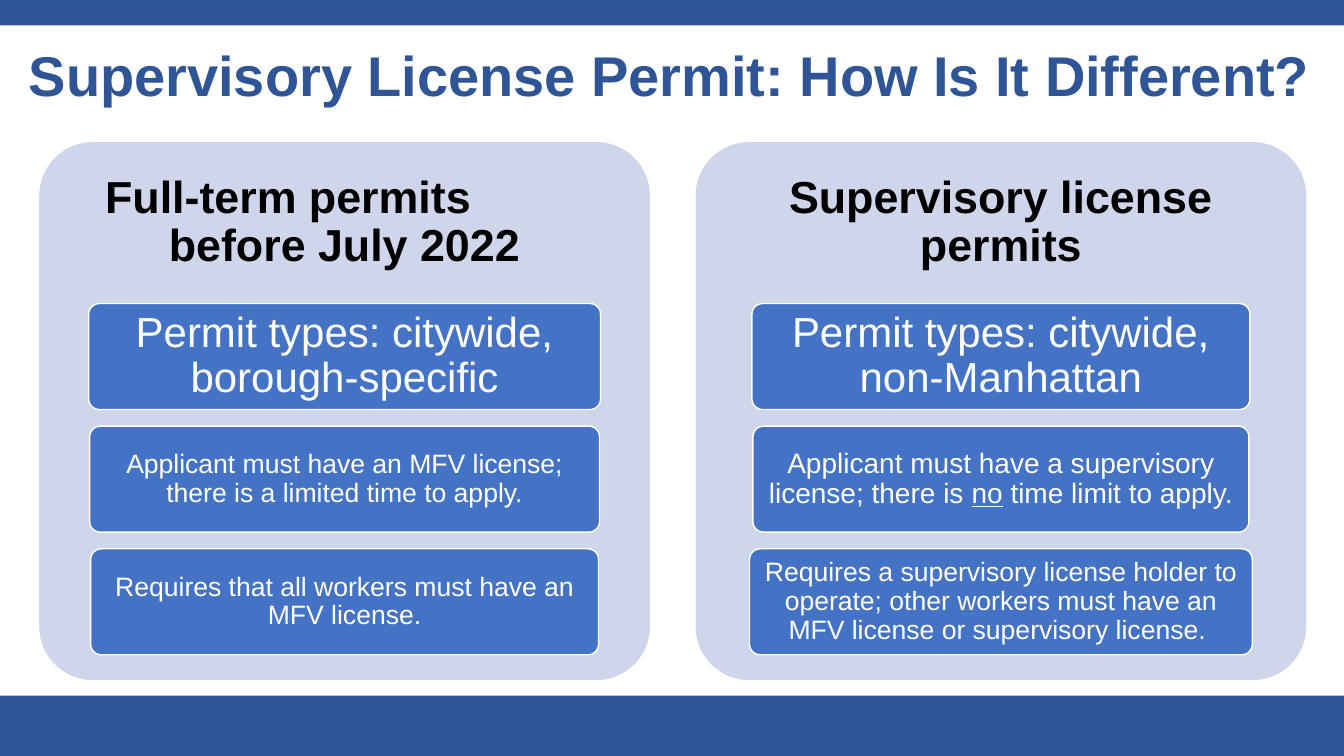
from pptx import Presentation
from pptx.dml.color import RGBColor
from pptx.enum.shapes import MSO_SHAPE
from pptx.enum.text import MSO_ANCHOR, PP_ALIGN
from pptx.util import Cm, Pt

RECTANGLE = MSO_SHAPE.RECTANGLE
ROUNDED = MSO_SHAPE.ROUNDED_RECTANGLE
MIDDLE = MSO_ANCHOR.MIDDLE
LEFT = PP_ALIGN.LEFT
CENTER = PP_ALIGN.CENTER

SLIDE_W, SLIDE_H = 33.87, 19.05
NAVY, PALE, BLUE = "2F5597", "CFD5EA", "4472C4"
WHITE, BLACK = "FFFFFF", "000000"
HEADING_H, CARD_H, CARD_PITCH = 4.07, 2.67, 3.09

PANELS = [
    {
        "left": 0.99,
        "heading": [("Full-term permits", LEFT, 1.33),
                    ("before July 2022", CENTER, 0)],
        "cards": [
            (12.9, 30, [("Permit types: citywide, borough-specific", False)]),
            (12.85, 19, [("Applicant must have an MFV license; "
                          "there is a limited time to apply.", False)]),
            (12.8, 19, [("Requires that all workers must have an MFV license.", False)]),
        ],
    },
    {
        "left": 17.53,
        "heading": [("Supervisory license permits", CENTER, 0)],
        "cards": [
            (12.55, 30, [("Permit types: citywide, non-Manhattan", False)]),
            (12.5, 20, [("Applicant must have a supervisory license; there is ", False),
                        ("no", True),
                        (" time limit to apply.", False)]),
            (12.67, 19, [("Requires a supervisory license holder to operate; other workers "
                          "must have an MFV license or supervisory license. ", False)]),
        ],
    },
]


def rgb(hex_color):
    return RGBColor.from_string(hex_color)


def set_all(target, values):
    for attribute, value in values.items():
        setattr(target, attribute, value)


def draw_block(slide, preset, box, fill, outline=None):
    block = slide.shapes.add_shape(preset, *map(Cm, box))
    block.shadow.inherit = False
    block.fill.solid()
    block.fill.fore_color.rgb = rgb(fill)
    if outline:
        block.line.color.rgb = rgb(outline)
        block.line.width = Pt(1)
    else:
        block.line.fill.background()
    if preset == ROUNDED:
        block.adjustments[0] = 0.1
    return block


def prepare_frame(frame, inset_x, inset_y):
    set_all(frame, {
        "word_wrap": True, "vertical_anchor": MIDDLE,
        "margin_left": Cm(inset_x), "margin_right": Cm(inset_x),
        "margin_top": Cm(inset_y), "margin_bottom": Cm(inset_y),
    })


def write_paragraph(paragraph, runs, size, color, bold=False, align=CENTER):
    set_all(paragraph, {"alignment": align, "line_spacing": 0.9})
    for text, underlined in runs:
        run = paragraph.add_run()
        run.text = text
        set_all(run.font, {"name": "Arial", "size": Pt(size), "bold": bold})
        if underlined:
            run.font.underline = True
        run.font.color.rgb = rgb(color)


def draw_title(slide, box, text):
    frame = slide.shapes.add_textbox(*map(Cm, box)).text_frame
    prepare_frame(frame, 0.25, 0.13)
    write_paragraph(frame.paragraphs[0], [(text, False)], 40, NAVY, bold=True)


def draw_heading(slide, box, lines):
    frame = slide.shapes.add_textbox(*map(Cm, box)).text_frame
    prepare_frame(frame, 0.33, 0.33)
    for index, (text, align, indent) in enumerate(lines):
        paragraph = frame.add_paragraph() if index else frame.paragraphs[0]
        write_paragraph(paragraph, [(text, False)], 32, BLACK, True, align)
        if indent:
            paragraph._p.get_or_add_pPr().set("marL", str(Cm(indent)))


def draw_card(slide, box, size, runs):
    frame = draw_block(slide, ROUNDED, box, BLUE, WHITE).text_frame
    prepare_frame(frame, size / 150, size / 200)
    write_paragraph(frame.paragraphs[0], runs, size, WHITE)


def draw_panel(slide, box, heading, cards):
    left, top, width, _ = box
    draw_block(slide, ROUNDED, box, PALE)
    draw_heading(slide, (left, top, width, HEADING_H), heading)
    for row, (card_w, size, runs) in enumerate(cards):
        card_left = left + (width - card_w) / 2
        card_top = top + HEADING_H + row * CARD_PITCH
        draw_card(slide, (card_left, card_top, card_w, CARD_H), size, runs)


def main():
    deck = Presentation()
    set_all(deck, {"slide_width": Cm(SLIDE_W), "slide_height": Cm(SLIDE_H)})
    slide = deck.slides.add_slide(deck.slide_layouts[6])
    for band_top, band_h in ((0, 0.64), (17.53, 1.52)):
        draw_block(slide, RECTANGLE, (0, band_top, SLIDE_W, band_h), NAVY)
    draw_title(slide, (-0.33, 1.02, 34.39, 1.9),
               "Supervisory License Permit: How Is It Different?")
    for panel in PANELS:
        draw_panel(slide, (panel["left"], 3.58, 15.39, 13.56),
                   panel["heading"], panel["cards"])
    deck.save("out.pptx")


if __name__ == "__main__":
    main()
